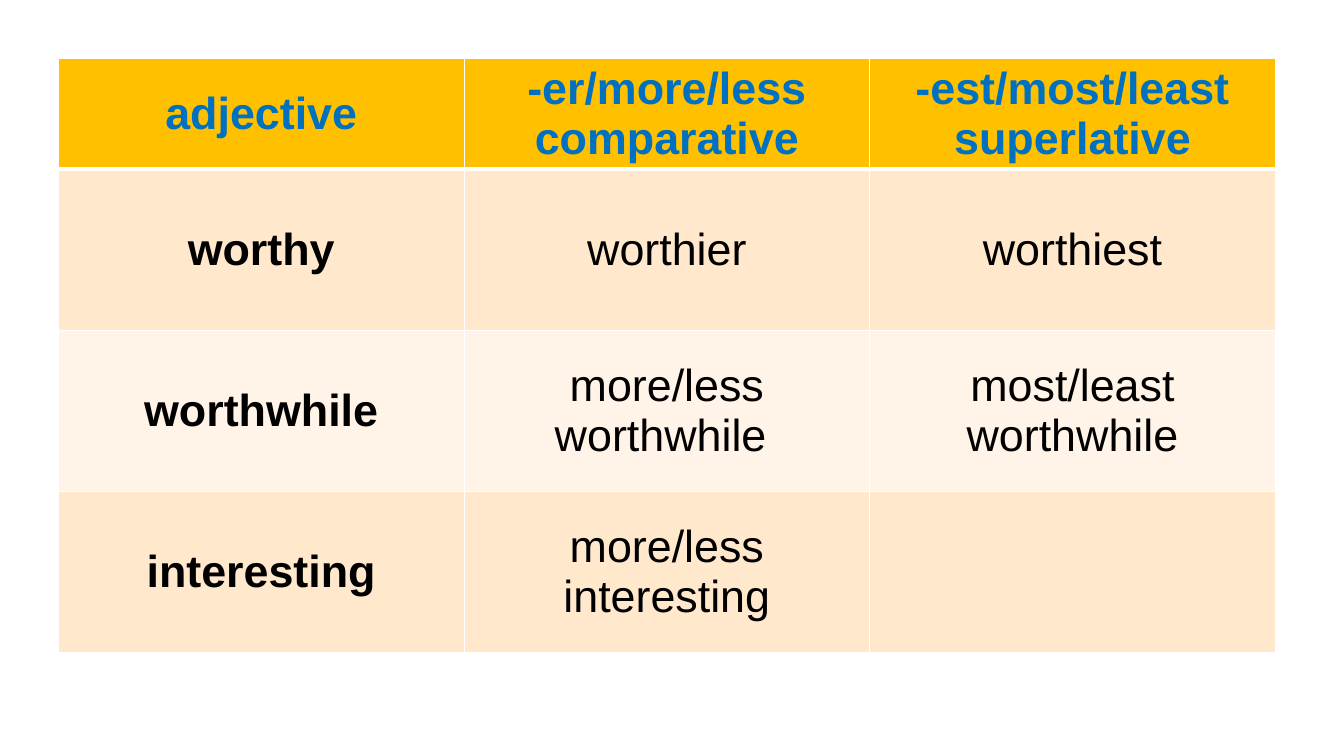
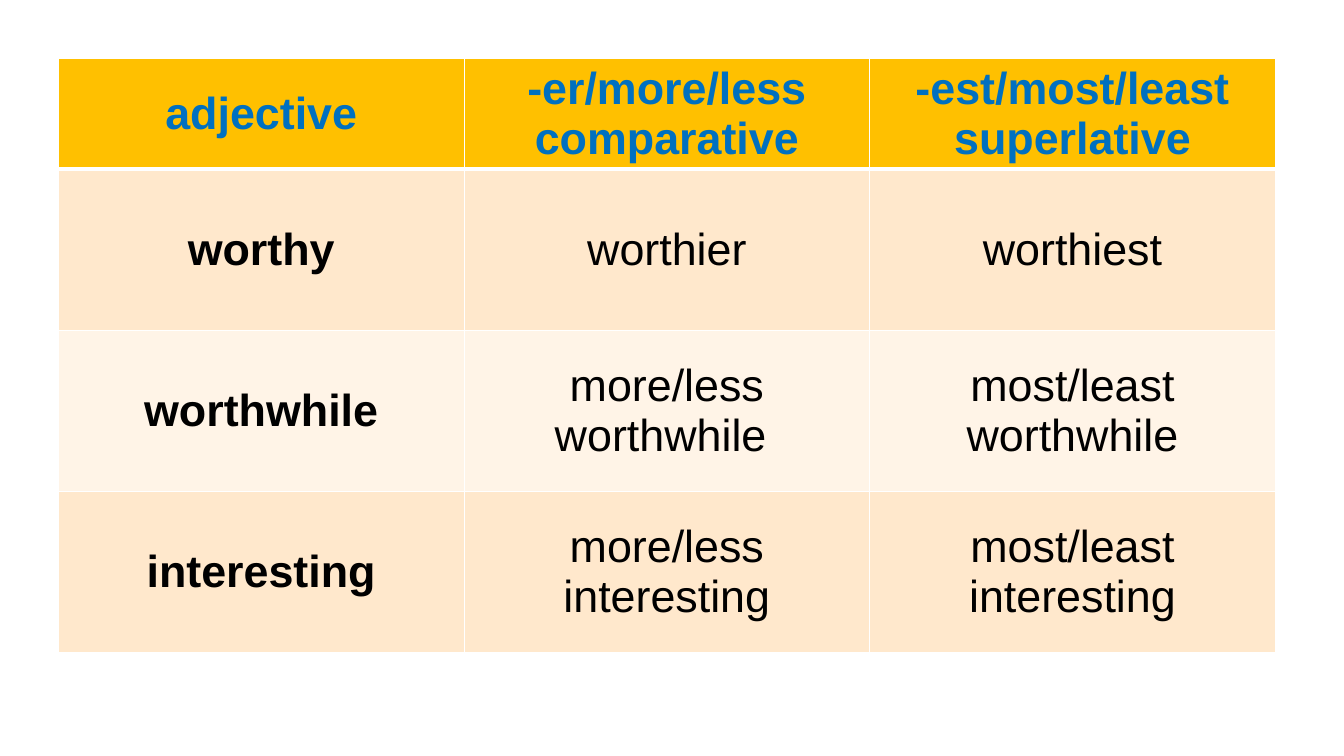
from dataclasses import dataclass

from lxml import etree
from pptx import Presentation
from pptx.dml.color import RGBColor
from pptx.enum.text import MSO_ANCHOR, PP_ALIGN
from pptx.oxml.ns import qn
from pptx.util import Inches, Pt

CENTER = PP_ALIGN.CENTER
MIDDLE = MSO_ANCHOR.MIDDLE


@dataclass(frozen=True)
class Theme:
    font: str = "Arial"
    size: int = 32
    header_text: str = "0070C0"
    body_text: str = "000000"
    header_fill: str = "FFC000"
    bands: tuple = ("FFE8CC", "FFF4E7")
    rule: str = "FFFFFF"
    thin: int = 1
    thick: int = 3


THEME = Theme()
SLIDE_W, SLIDE_H = 13.33, 7.5
MARGIN = 0.58
TABLE_W = 12.07
HEADER_H, BODY_H = 0.96, 1.6

HEADINGS = ("adjective", "-er/more/less\ncomparative", "-est/most/least\nsuperlative")
WORTHY = ("worthy", "worthier", "worthiest")
WORTHWHILE = ("worthwhile", "more/less\nworthwhile ", "most/least\nworthwhile")
INTERESTING = ("interesting", "more/less\ninteresting", "most/least\ninteresting")
OPENING_ROWS = (HEADINGS, WORTHY, WORTHWHILE)
STAGES = (
    (*OPENING_ROWS, (*INTERESTING[:2], "")),
    (*OPENING_ROWS, INTERESTING),
)


def add_borders(cell, widths):
    properties = cell._tc.get_or_add_tcPr()
    for side, width in widths.items():
        line = etree.SubElement(properties, qn(f"a:ln{side}"), w=str(Pt(width)))
        fill = etree.SubElement(line, qn("a:solidFill"))
        etree.SubElement(fill, qn("a:srgbClr"), val=THEME.rule)


def fill_cell(cell, wording, fill, color, bold):
    cell.text = wording
    cell.vertical_anchor = MIDDLE
    cell.fill.solid()
    cell.fill.fore_color.rgb = RGBColor.from_string(fill)
    font_format = {"name": THEME.font, "size": Pt(THEME.size), "bold": bold}
    for paragraph in cell.text_frame.paragraphs:
        paragraph.alignment = CENTER
        for run in paragraph.runs:
            for attribute, value in font_format.items():
                setattr(run.font, attribute, value)
            run.font.color.rgb = RGBColor.from_string(color)


prs = Presentation()
prs.slide_width, prs.slide_height = Inches(SLIDE_W), Inches(SLIDE_H)
blank_layout = prs.slide_layouts[6]

for stage in STAGES:
    slide = prs.slides.add_slide(blank_layout)
    row_heights = [HEADER_H] + [BODY_H] * (len(stage) - 1)
    comparison = slide.shapes.add_table(
        len(stage), len(HEADINGS),
        Inches(MARGIN), Inches(MARGIN), Inches(TABLE_W), Inches(sum(row_heights)),
    ).table
    for row, (wordings, height) in enumerate(zip(stage, row_heights)):
        comparison.rows[row].height = Inches(height)
        is_header = row == 0
        fill = THEME.header_fill if is_header else THEME.bands[(row - 1) % 2]
        color = THEME.header_text if is_header else THEME.body_text
        borders = {
            "L": THEME.thin,
            "R": THEME.thin,
            "T": THEME.thick if row == 1 else THEME.thin,
            "B": THEME.thick if is_header else THEME.thin,
        }
        for column, wording in enumerate(wordings):
            cell = comparison.cell(row, column)
            add_borders(cell, borders)
            fill_cell(cell, wording, fill, color, is_header or column == 0)

prs.save("out.pptx")
